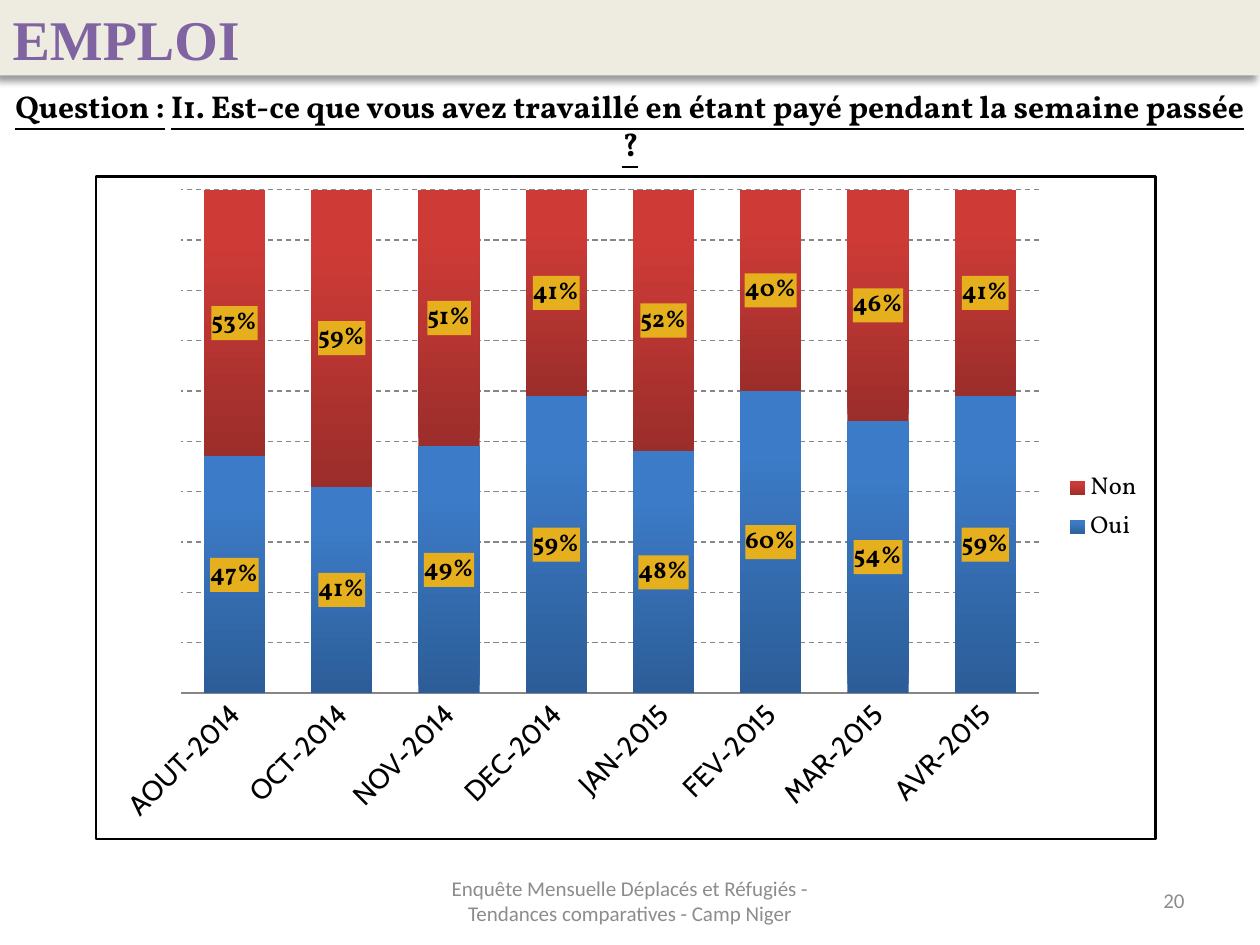
from dataclasses import dataclass

from lxml import etree
from pptx import Presentation
from pptx import util as u
from pptx.chart.data import CategoryChartData
from pptx.dml.color import RGBColor
from pptx.enum import chart as charts, dml, text
from pptx.oxml import parse_xml
from pptx.oxml.ns import nsdecls, qn

COLOURS = {
    "band": "EEECE1", "title": "8064A2", "text": "000000", "footer": "8C8C8C",
    "grid": "868686", "label": "E6AF1E",
    "oui_light": "3C7BC7", "oui_dark": "2C5D98",
    "non_light": "CE3B37", "non_dark": "9B2D2A",
}
MONTHS = ["AOUT-2014", "OCT-2014", "NOV-2014", "DEC-2014",
          "JAN-2015", "FEV-2015", "MAR-2015", "AVR-2015"]


@dataclass
class Answer:
    name: str
    values: list[float]
    light: str
    dark: str


@dataclass
class Caption:
    runs: list[tuple[str, bool]]
    left: float
    top: float
    width: float
    height: float
    font: str
    size: int
    colour: str
    align: text.PP_ALIGN
    bold: bool = False
    grow: bool = False


ANSWERS = [
    Answer("Oui", [0.47, 0.41, 0.49, 0.59, 0.48, 0.6, 0.54, 0.59], "oui_light", "oui_dark"),
    Answer("Non", [0.53, 0.59, 0.51, 0.41, 0.52, 0.4, 0.46, 0.41], "non_light", "non_dark"),
]
CAPTIONS = [
    Caption([("Question :", True), (" ", False),
             ("I1. Est-ce que vous avez travaillé en étant payé pendant la semaine passée ?", True)],
            0, 2, 25.4, 1.03, "Vollkorn", 18, "text", text.PP_ALIGN.CENTER, True, True),
    Caption([("Enquête Mensuelle Déplacés et Réfugiés - Tendances comparatives - Camp Niger", False)],
            8.68, 17.65, 8.04, 1.01, "Calibri", 12, "footer", text.PP_ALIGN.CENTER),
    Caption([("20", False)],
            18.2, 17.65, 5.93, 1.01, "Calibri", 12, "footer", text.PP_ALIGN.RIGHT),
]


def rgb(name: str) -> RGBColor:
    return RGBColor.from_string(COLOURS[name])


def set_font(font, name: str, size: int, colour: str, bold: bool = False) -> None:
    font.name = name
    font.size = u.Pt(size)
    font.bold = bold
    font.color.rgb = rgb(colour)


def draw_title(slide) -> None:
    title = slide.shapes.title
    title.left, title.top = u.Cm(0), u.Cm(0)
    title.width, title.height = u.Cm(25.4), u.Cm(1.52)
    title.fill.solid()
    title.fill.fore_color.rgb = rgb("band")
    title._element.spPr.append(parse_xml(
        f'<a:effectLst {nsdecls("a")}><a:outerShdw blurRad="50800" dist="50800" dir="8100000">'
        f'<a:srgbClr val="{COLOURS["text"]}"><a:alpha val="40000"/></a:srgbClr>'
        '</a:outerShdw></a:effectLst>'))
    frame = title.text_frame
    frame.text = "EMPLOI"
    frame.auto_size = text.MSO_AUTO_SIZE.NONE
    frame.vertical_anchor = text.MSO_ANCHOR.MIDDLE
    paragraph = frame.paragraphs[0]
    paragraph.alignment = text.PP_ALIGN.LEFT
    set_font(paragraph.font, "Times New Roman", 32, "title", True)


def draw_caption(slide, caption: Caption) -> None:
    box = slide.shapes.add_textbox(u.Cm(caption.left), u.Cm(caption.top),
                                   u.Cm(caption.width), u.Cm(caption.height))
    frame = box.text_frame
    frame.word_wrap = True
    frame.vertical_anchor = text.MSO_ANCHOR.MIDDLE
    if caption.grow:
        frame.auto_size = text.MSO_AUTO_SIZE.SHAPE_TO_FIT_TEXT
    paragraph = frame.paragraphs[0]
    paragraph.alignment = caption.align
    set_font(paragraph.font, caption.font, caption.size, caption.colour, caption.bold)
    for words, underlined in caption.runs:
        run = paragraph.add_run()
        run.text = words
        if underlined:
            run.font.underline = True


def style_series(series, answer: Answer) -> None:
    fill = series.format.fill
    fill.gradient()
    fill.gradient_angle = 90
    for stop, colour, position in zip(fill.gradient_stops, (answer.dark, answer.light), (0, 0.8)):
        stop.color.rgb = rgb(colour)
        stop.position = position
    labels = series.data_labels
    labels.show_value = True
    labels.number_format = "0%"
    labels.number_format_is_linked = False
    set_font(labels.font, "Vollkorn", 14, "text", True)
    labels._element.find(qn("c:numFmt")).addnext(parse_xml(
        f'<c:spPr {nsdecls("c", "a")}><a:solidFill>'
        f'<a:srgbClr val="{COLOURS["label"]}"/></a:solidFill></c:spPr>'))


def style_axes(chart) -> None:
    months = chart.category_axis
    months.major_tick_mark = charts.XL_TICK_MARK.NONE
    months.format.line.color.rgb = rgb("grid")
    set_font(months.tick_labels.font, "Cabin", 16, "text")
    months._element.find(qn("c:txPr")).find(qn("a:bodyPr")).set("rot", "-2700000")
    shares = chart.value_axis
    shares.visible = False
    shares.minimum_scale, shares.maximum_scale, shares.major_unit = 0, 1, 0.1
    shares.tick_labels.number_format = "0%"
    shares.tick_labels.number_format_is_linked = False
    grid = shares.major_gridlines.format.line
    grid.color.rgb = rgb("grid")
    grid.width = u.Pt(0.75)
    grid.dash_style = dml.MSO_LINE.DASH


def frame_chart(chart) -> None:
    chart._chartSpace.find(qn("c:chart")).addnext(parse_xml(
        f'<c:spPr {nsdecls("c", "a")}><a:noFill/><a:ln w="{u.Pt(1.5)}"><a:solidFill>'
        f'<a:srgbClr val="{COLOURS["text"]}"/></a:solidFill></a:ln></c:spPr>'))
    plot_area = chart._chartSpace.find(qn("c:chart")).find(qn("c:plotArea"))
    for old in plot_area.findall(qn("c:layout")):
        plot_area.remove(old)
    layout = etree.Element(qn("c:layout"))
    manual = etree.SubElement(layout, qn("c:manualLayout"))
    for tag, value in (("layoutTarget", "inner"), ("xMode", "edge"), ("yMode", "edge"),
                       ("x", "0.08"), ("y", "0.02"), ("w", "0.81"), ("h", "0.76")):
        etree.SubElement(manual, qn(f"c:{tag}")).set("val", value)
    plot_area.insert(0, layout)


def draw_chart(slide) -> None:
    data = CategoryChartData(number_format="0%")
    data.categories = MONTHS
    for answer in ANSWERS:
        data.add_series(answer.name, answer.values)
    chart = slide.shapes.add_chart(charts.XL_CHART_TYPE.COLUMN_STACKED_100, u.Cm(1.91),
                                   u.Cm(3.53), u.Cm(21.41), u.Cm(13.41), data).chart
    set_font(chart.font, "Calibri", 10, "text")
    chart.has_title = False
    chart.has_legend = True
    chart.legend.position = charts.XL_LEGEND_POSITION.RIGHT
    chart.legend.include_in_layout = False
    set_font(chart.legend.font, "Vollkorn", 14, "text")
    plot = chart.plots[0]
    plot.gap_width, plot.overlap = 75, 100
    plot.vary_by_categories = False
    for series, answer in zip(plot.series, ANSWERS):
        style_series(series, answer)
    style_axes(chart)
    frame_chart(chart)


def main() -> None:
    presentation = Presentation()
    presentation.slide_width, presentation.slide_height = u.Cm(25.4), u.Cm(19.05)
    slide = presentation.slides.add_slide(presentation.slide_layouts[5])
    draw_title(slide)
    for caption in CAPTIONS:
        draw_caption(slide, caption)
    draw_chart(slide)
    presentation.save("out.pptx")


if __name__ == "__main__":
    main()
